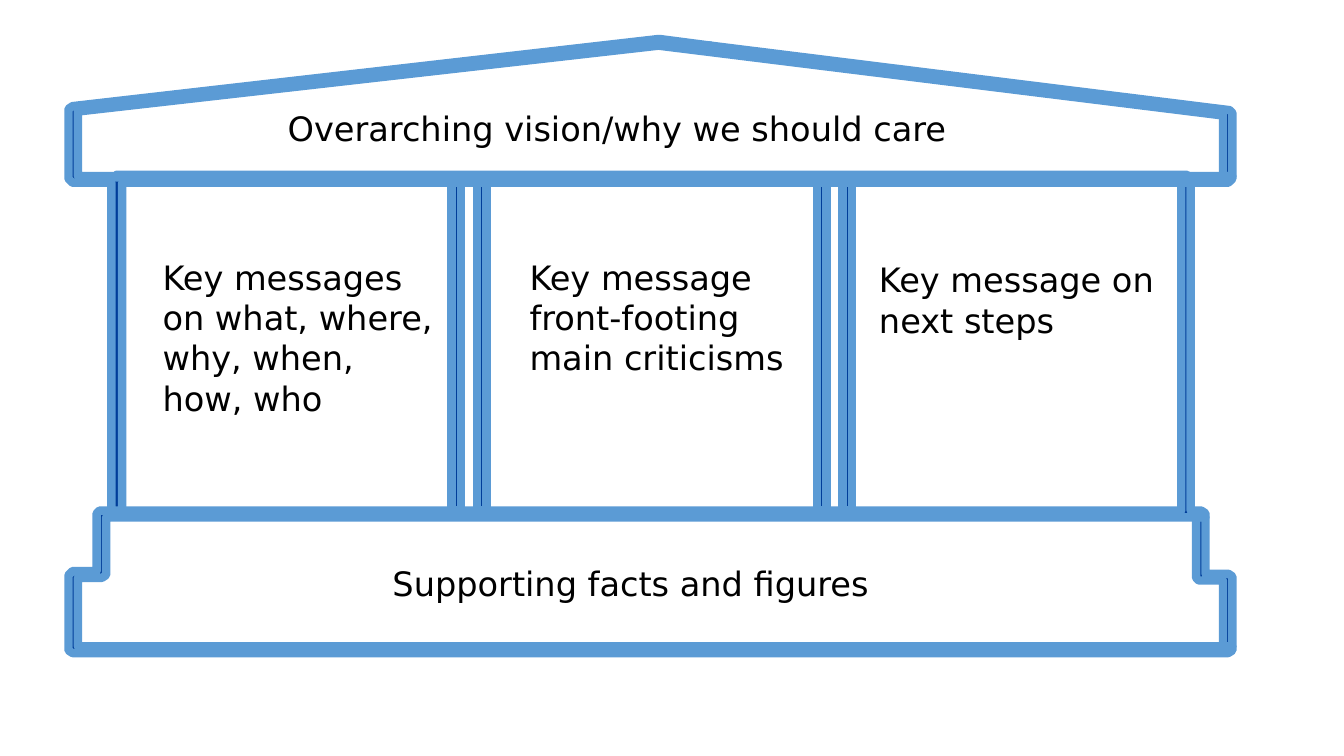
import pptx
import pptx.dml.color
import pptx.enum.shapes
import pptx.enum.text
import pptx.oxml
import pptx.oxml.ns
import pptx.util
from pptx.util import Inches

STROKE = pptx.dml.color.RGBColor(0x5B, 0x9B, 0xD5)
NAVY = pptx.dml.color.RGBColor(0x00, 0x3D, 0x99)
BLACK = pptx.dml.color.RGBColor(0x00, 0x00, 0x00)
FONT = "DejaVu Sans"

WALL_HEIGHT = 2.44
PILLAR_WIDTH = 0.07
PILLAR_GAP = 0.19
PILLAR_PITCH = 2.72

# Outlines in inches, relative to the top left of their region.
ROOF_LEFT = [
    (4.39, 0), (0.03, 0.5), (0, 0.52), (0, 1.04), (0.03, 1.07),
    (0.32, 1.07), (0.32, 1.07 + WALL_HEIGHT), (0.4, 1.07 + WALL_HEIGHT), (0.4, 1.07),
    (8.63, 1.07), (8.66, 1.04), (8.66, 1.02), (0.07, 1.02), (0.07, 0.54),
    (4.39, 0.05), (4.78, 0.05), (4.4, 0),
]
ROOF_RIGHT = [
    (4.78, 0.05), (4.39, 0.05), (8.59, 0.57), (8.59, 1.02),
    (8.66, 1.02), (8.66, 0.55), (8.64, 0.53),
]
LINTEL = [(8.32, 1.01), (0.36, 1.01), (0.35, 1.03), (8.32, 1.03)]
BASE_LEFT = [
    (8.35, -WALL_HEIGHT), (8.28, -WALL_HEIGHT), (8.28, 0), (0.23, 0),
    (0.21, 0.02), (0.21, 0.45), (0.03, 0.45), (0, 0.48), (0, 1.04), (0.03, 1.06),
    (8.63, 1.06), (8.66, 1.04), (8.66, 1.01), (0.07, 1.01), (0.07, 0.5),
    (0.25, 0.5), (0.28, 0.48), (0.28, 0.05), (8.46, 0.05), (8.46, 0.02),
    (8.43, 0), (8.35, 0),
]
BASE_RIGHT = [
    (8.46, 0.05), (8.39, 0.05), (8.39, 0.5), (8.41, 0.52), (8.59, 0.52),
    (8.59, 1.01), (8.66, 1.01), (8.66, 0.49), (8.63, 0.47), (8.46, 0.47),
]


def style_masonry(shape):
    shape.shadow.inherit = False
    shape.fill.solid()
    shape.fill.fore_color.rgb = NAVY
    shape.line.color.rgb = STROKE
    shape.line.width = pptx.util.Pt(4.5)
    round_join = pptx.oxml.parse_xml(f"<a:round {pptx.oxml.ns.nsdecls('a')}/>")
    shape.element.spPr.find(pptx.oxml.ns.qn("a:ln")).append(round_join)


def add_outlines(temple, left, top, outlines):
    for outline in outlines:
        points = [(Inches(left + x), Inches(top + y)) for x, y in outline]
        builder = temple.shapes.build_freeform(*points[0], scale=1.0)
        builder.add_line_segments(points[1:], close=True)
        style_masonry(builder.convert_to_shape())


def add_pillars(temple, left, top, height):
    """Two pairs of pillars that divide the hall into three bays."""
    for pair in range(2):
        for side in range(2):
            x = left + pair * PILLAR_PITCH + side * PILLAR_GAP
            pillar = temple.shapes.add_shape(
                pptx.enum.shapes.MSO_SHAPE.RECTANGLE,
                Inches(x), Inches(top), Inches(PILLAR_WIDTH), Inches(height))
            style_masonry(pillar)


def write_message(holder, message):
    frame = holder.text_frame
    frame.word_wrap = True
    frame.auto_size = pptx.enum.text.MSO_AUTO_SIZE.SHAPE_TO_FIT_TEXT
    frame.vertical_anchor = pptx.enum.text.MSO_ANCHOR.TOP
    frame.margin_left = frame.margin_right = Inches(0.05)
    frame.margin_top = frame.margin_bottom = Inches(0.05)
    paragraph = frame.paragraphs[0]
    paragraph.alignment = pptx.enum.text.PP_ALIGN.LEFT
    run = paragraph.add_run()
    run.text = message
    run.font.name = FONT
    run.font.size = pptx.util.Pt(18)
    run.font.color.rgb = BLACK


def add_message(slide, left, top, width, height, message):
    box = slide.shapes.add_textbox(
        Inches(left), Inches(top), Inches(width), Inches(height))
    write_message(box, message)


def place_vision(slide, left, top, width, height, vision):
    title = slide.shapes.title
    title.left, title.top = Inches(left), Inches(top)
    title.width, title.height = Inches(width), Inches(height)
    write_message(title, vision)


def build_message_house(slide, left, top):
    """Roof, pillars and base, each set below the one before."""
    hall_top = top + 1.07
    base_top = hall_top + WALL_HEIGHT
    temple = slide.shapes.add_group_shape()
    add_outlines(temple, left, base_top, [BASE_LEFT, BASE_RIGHT])
    add_outlines(temple, left, top, [ROOF_LEFT])
    add_pillars(temple, left + 2.85, hall_top, WALL_HEIGHT)
    add_outlines(temple, left, top, [LINTEL, ROOF_RIGHT])

    add_message(slide, left + 0.65, hall_top + 0.5, 2.13, 1.62,
                "Key messages on what, where, why, when, how, who")
    add_message(slide, left + 3.38, hall_top + 0.5, 2.13, 1.01,
                "Key message front-footing main criticisms")
    add_message(slide, left + 5.98, hall_top + 0.52, 2.25, 0.71,
                "Key message on next steps")
    place_vision(slide, left + 1.58, top + 0.46, 8.58, 0.41,
                 "Overarching vision/why we should care")
    add_message(slide, left + 2.36, base_top + 0.34, 8.58, 0.41,
                "Supporting facts and figures")


def main():
    deck = pptx.Presentation()
    deck.slide_width = Inches(10)
    deck.slide_height = deck.slide_width * 9 // 16
    slide = deck.slides.add_slide(deck.slide_layouts.get_by_name("Title Only"))
    build_message_house(slide, 0.51, 0.29)
    deck.save("out.pptx")


if __name__ == "__main__":
    main()
